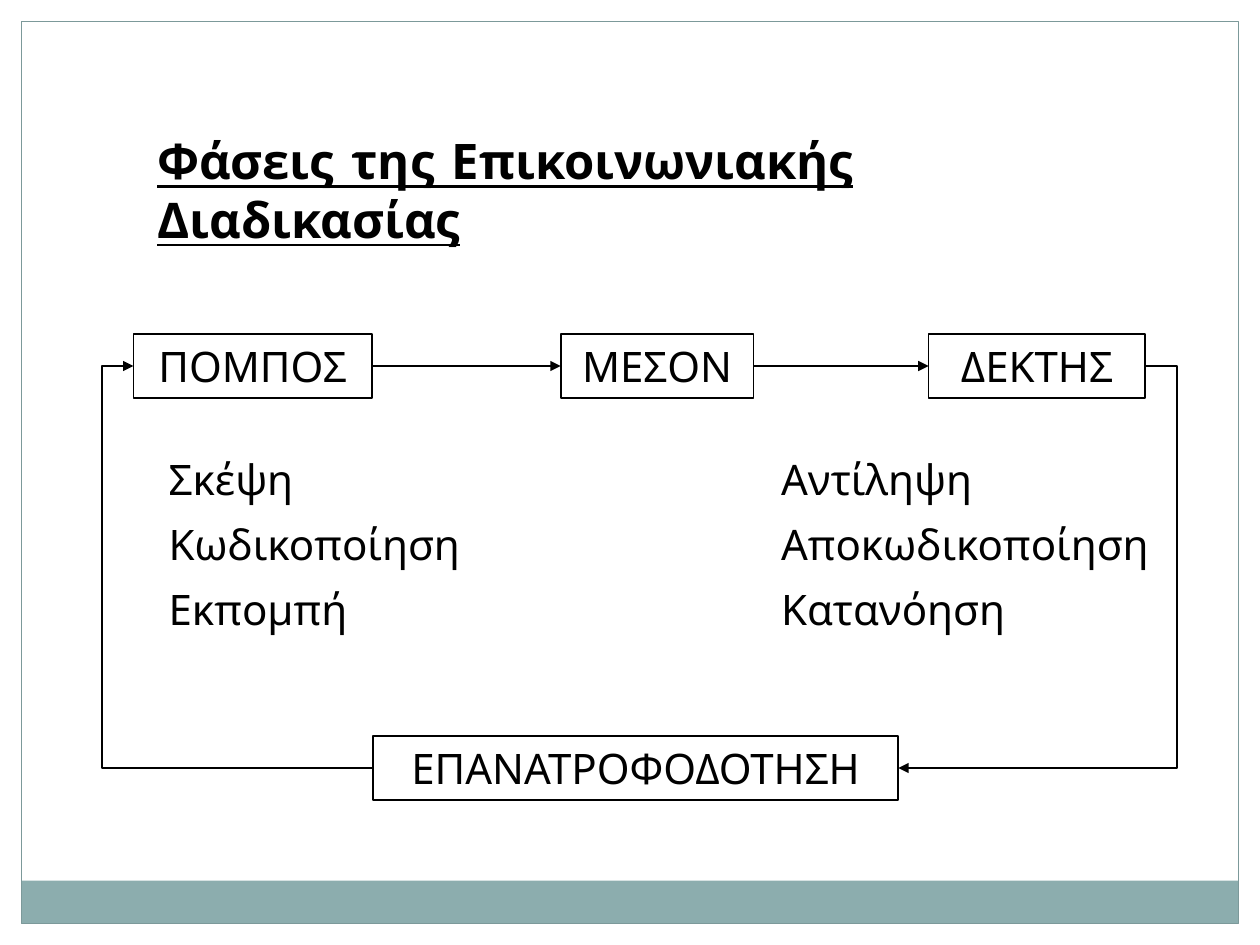
from pptx import Presentation
from pptx.dml.color import RGBColor as RGB
from pptx.enum.shapes import MSO_CONNECTOR as LINK, MSO_SHAPE as SHAPE
from pptx.enum.text import MSO_ANCHOR as ANCHOR, PP_ALIGN as ALIGN
from pptx.oxml.ns import qn
from pptx.util import Inches, Pt
from lxml.etree import SubElement as sub

COLOR = {"ink": "000000", "band": "8CADAE", "frame": "7C999A"}
TOP, LEFT, RIGHT = 0, 1, 3  # connection sites of a rectangle


def write(frame, text, size=24, font="Cabin", bold=False, under=False,
          align=ALIGN.LEFT, gap=0, anchor=ANCHOR.TOP):
    """Fill a text frame, one paragraph for each line of text."""
    frame.word_wrap = True
    frame.vertical_anchor = anchor
    for i, line in enumerate(text.split("\n")):
        para = frame.add_paragraph() if i else frame.paragraphs[0]
        para.alignment = align
        para.space_before = Pt(gap if i else 0)
        run = para.add_run()
        run.text = line
        face = run.font
        face.name, face.size = font, Pt(size)
        face.bold, face.underline = bold, under
        face.color.rgb = RGB.from_string(COLOR["ink"])


def rect(slide, box, fill=None, line=None, width=1):
    shape = slide.shapes.add_shape(SHAPE.RECTANGLE, *map(Inches, box))
    shape.shadow.inherit = False
    if fill:
        shape.fill.solid()
        shape.fill.fore_color.rgb = RGB.from_string(COLOR[fill])
    else:
        shape.fill.background()
    if line:
        shape.line.color.rgb = RGB.from_string(COLOR[line])
        shape.line.width = Pt(width)
    else:
        shape.line.fill.background()
    return shape


def label(slide, box, text, **form):
    write(slide.shapes.add_textbox(*map(Inches, box)).text_frame, text, **form)


def node(slide, box, text):
    shape = rect(slide, box, line="ink")
    write(shape.text_frame, text, align=ALIGN.CENTER, anchor=ANCHOR.MIDDLE)
    return shape


def arrow(slide, start, exit, end, entry, bend=None):
    """Join two nodes; bend is the elbow's place as a share of the width."""
    kind = LINK.STRAIGHT if bend is None else LINK.ELBOW
    link = slide.shapes.add_connector(kind, 0, 0, 0, 0)
    link.begin_connect(start, exit)
    link.end_connect(end, entry)
    link.line.color.rgb = RGB.from_string(COLOR["ink"])
    link.line.width = Pt(1)
    sub(link.line._get_or_add_ln(), qn("a:tailEnd"), type="triangle")
    props = link._element.spPr
    sub(props, qn("a:effectLst"))
    if bend is not None:
        guides = props.find(qn("a:prstGeom")).get_or_add_avLst()
        sub(guides, qn("a:gd"), name="adj1", fmla=f"val {round(bend * 100000)}")


def border(slide, box):
    x, y, w, h = box
    foot = 0.34
    rect(slide, (x, y + h - foot, w, foot), fill="band")
    rect(slide, box, line="frame", width=0.75)


def cycle(slide, box):
    """Sender, medium and receiver in a row, feedback below."""
    x, y, w, h = box
    high = 0.51
    sender = node(slide, (x, y, 1.89, high), "ΠΟΜΠΟΣ")
    medium = node(slide, (x + 3.39, y, 1.53, high), "ΜΕΣΟΝ")
    target = node(slide, (x + w - 1.72, y, 1.72, high), "ΔΕΚΤΗΣ")
    back = node(slide, (x + 1.9, y + h - high, 4.17, high), "ΕΠΑΝΑΤΡΟΦΟΔΟΤΗΣΗ")

    # Steps under the sender and the receiver
    label(slide, (x + 0.18, y + 0.9, 2.66, 1.7),
          "Σκέψη\nΚωδικοποίηση\nΕκπομπή", gap=8.4)
    label(slide, (x + 5.04, y + 0.9, 3.28, 1.7),
          "Αντίληψη\nΑποκωδικοποίηση\nΚατανόηση", gap=8.4)

    # Forward arrows, then the feedback loop
    arrow(slide, sender, RIGHT, medium, LEFT)
    arrow(slide, medium, RIGHT, target, LEFT)
    reach = 0.25
    arrow(slide, target, RIGHT, back, RIGHT, bend=-reach / 1.96)
    arrow(slide, back, LEFT, sender, LEFT, bend=1 + reach / 1.9)


def main():
    deck = Presentation()
    deck.slide_width, deck.slide_height = Inches(10), Inches(7.5)
    slide = deck.slides.add_slide(deck.slide_layouts[6])
    border(slide, (0.17, 0.17, 9.66, 7.16))
    label(slide, (1.15, 0.99, 7.47, 0.57), "Φάσεις της Επικοινωνιακής Διαδικασίας",
          size=28, font="Comic Neue", bold=True, under=True)
    cycle(slide, (1.06, 2.65, 8.03, 3.7))
    deck.save("out.pptx")


if __name__ == "__main__":
    main()
